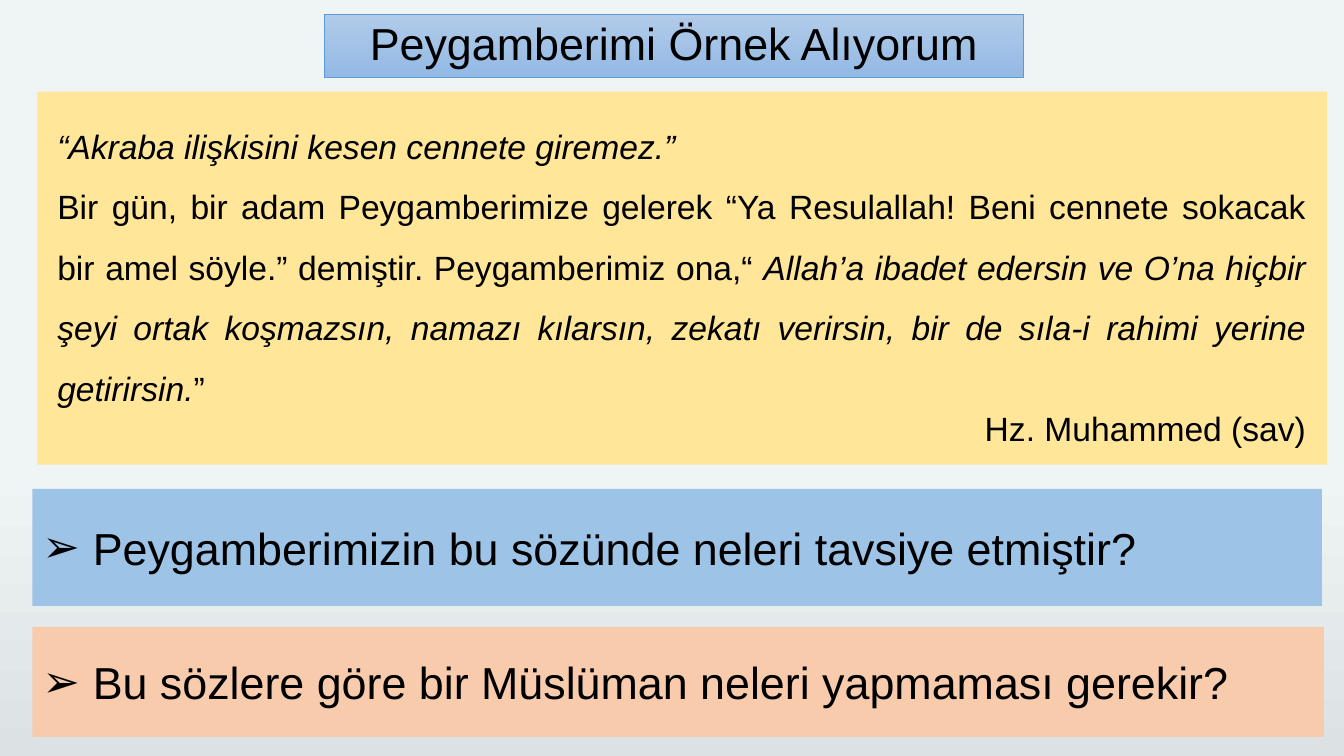
from dataclasses import dataclass

from lxml import etree
from pptx import Presentation
from pptx.dml.color import RGBColor
from pptx.enum.shapes import MSO_SHAPE
from pptx.enum.text import MSO_ANCHOR, MSO_AUTO_SIZE, PP_ALIGN
from pptx.oxml.ns import qn
from pptx.util import Inches, Pt

RECTANGLE = MSO_SHAPE.RECTANGLE
MIDDLE = MSO_ANCHOR.MIDDLE
TOP = MSO_ANCHOR.TOP
NO_FIT = MSO_AUTO_SIZE.NONE
LEFT, CENTER = PP_ALIGN.LEFT, PP_ALIGN.CENTER
RIGHT, JUSTIFY = PP_ALIGN.RIGHT, PP_ALIGN.JUSTIFY
TWO_CONTENT_LAYOUT = 3
FONT = "Arial"
BLACK = "000000"


@dataclass(frozen=True)
class Box:
    left: float
    top: float
    width: float
    height: float


@dataclass(frozen=True)
class Question:
    placeholder: int
    box: Box
    fill: str
    text: str


@dataclass(frozen=True)
class Phrase:
    text: str
    italic: bool = False


TITLE_BOX = Box(3.22, 0.14, 6.93, 0.63)
QUOTE_PANEL_BOX = Box(0.37, 0.91, 12.79, 3.7)
QUOTE_BOX = Box(0.47, 1, 12.58, 3.53)

QUESTIONS = [
    Question(1, Box(0.32, 4.85, 12.79, 1.16), "9DC3E6",
             "Peygamberimizin bu sözünde neleri tavsiye etmiştir?"),
    Question(2, Box(0.32, 6.22, 12.81, 1.09), "F8CBAD",
             "Bu sözlere göre bir Müslüman neleri yapmaması gerekir?"),
]

HADITHS = [
    [Phrase("“Akraba ilişkisini kesen cennete giremez.”", italic=True)],
    [
        Phrase("Bir gün, bir adam Peygamberimize gelerek “Ya Resulallah! "
               "Beni cennete sokacak bir amel söyle.” demiştir. "
               "Peygamberimiz ona,“ "),
        Phrase("Allah’a ibadet edersin ve O’na hiçbir şeyi ortak koşmazsın, "
               "namazı kılarsın, zekatı verirsin, bir de sıla-i rahimi yerine "
               "getirirsin.", italic=True),
        Phrase("”"),
    ],
]


def color(hex_value: str) -> RGBColor:
    return RGBColor.from_string(hex_value)


def fill_solid(shape, hex_value: str) -> None:
    shape.fill.solid()
    shape.fill.fore_color.rgb = color(hex_value)


def fill_downward(fill, start: str, end: str, start_at: float = 0) -> None:
    fill.gradient()
    fill.gradient_angle = 270
    for stop, hex_value, position in zip(
            fill.gradient_stops, (start, end), (start_at, 1)):
        stop.color.rgb = color(hex_value)
        stop.position = position


def place(shape, box: Box) -> None:
    shape.left, shape.top = Inches(box.left), Inches(box.top)
    shape.width, shape.height = Inches(box.width), Inches(box.height)


def prepare_frame(shape, anchor=MIDDLE):
    frame = shape.text_frame
    frame.word_wrap = True
    frame.auto_size = NO_FIT
    frame.vertical_anchor = anchor
    return frame


def write(paragraph, text: str, *, size: float, align=LEFT,
          spacing: float = 1.0, italic: bool = False) -> None:
    paragraph.alignment = align
    paragraph.line_spacing = spacing
    paragraph.space_before = Pt(0)
    run = paragraph.add_run()
    run.text = text
    run.font.name = FONT
    run.font.size = Pt(size)
    run.font.italic = italic
    run.font.color.rgb = color(BLACK)


def add_arrow_bullet(paragraph) -> None:
    properties = paragraph._p.get_or_add_pPr()
    indent = Inches(0.5)
    properties.set("marL", str(indent))
    properties.set("indent", str(-indent))
    etree.SubElement(properties, qn("a:buFont")).set("typeface", FONT)
    etree.SubElement(properties, qn("a:buChar")).set("char", "➢")


def add_title(slide) -> None:
    title = slide.shapes.title
    place(title, TITLE_BOX)
    fill_downward(title.fill, "B1CBE9", "93B9E4")
    title.line.color.rgb = color("5B9BD5")
    title.line.width = Pt(0.5)
    write(prepare_frame(title).paragraphs[0], "Peygamberimi Örnek Alıyorum",
          size=32, align=CENTER, spacing=0.9)


def add_question(slide, question: Question) -> None:
    body = slide.placeholders[question.placeholder]
    place(body, question.box)
    fill_solid(body, question.fill)
    paragraph = prepare_frame(body).paragraphs[0]
    write(paragraph, question.text, size=32)
    add_arrow_bullet(paragraph)


def add_quote(slide) -> None:
    panel = slide.shapes.add_shape(RECTANGLE, 0, 0, 0, 0)
    place(panel, QUOTE_PANEL_BOX)
    panel.shadow.inherit = False
    fill_solid(panel, "FFE699")
    panel.line.fill.background()

    quote = slide.shapes.add_textbox(0, 0, 0, 0)
    place(quote, QUOTE_BOX)
    frame = prepare_frame(quote, TOP)
    paragraph = frame.paragraphs[0]
    for hadith in HADITHS:
        for phrase in hadith:
            write(paragraph, phrase.text, size=24, align=JUSTIFY,
                  spacing=1.5, italic=phrase.italic)
        paragraph = frame.add_paragraph()
    write(paragraph, "Hz. Muhammed (sav)", size=24, align=RIGHT)


def main() -> None:
    presentation = Presentation()
    presentation.slide_width = Inches(13.33)
    presentation.slide_height = Inches(7.5)
    layout = presentation.slide_layouts[TWO_CONTENT_LAYOUT]
    slide = presentation.slides.add_slide(layout)
    fill_downward(slide.background.fill, "EFF4F5", "DCE1E4", start_at=0.62)
    add_title(slide)
    add_quote(slide)
    for question in QUESTIONS:
        add_question(slide, question)
    presentation.save("out.pptx")


if __name__ == "__main__":
    main()
